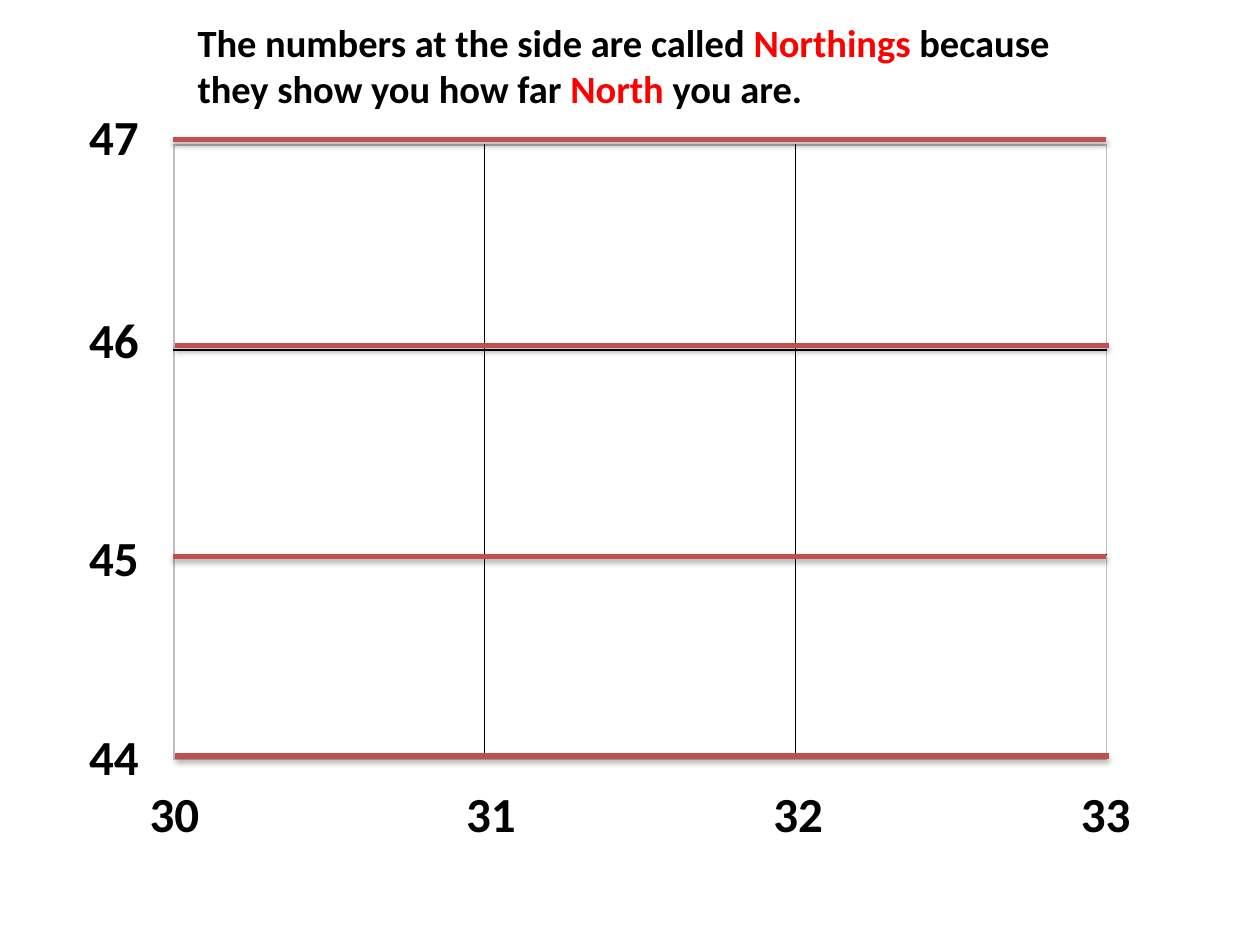
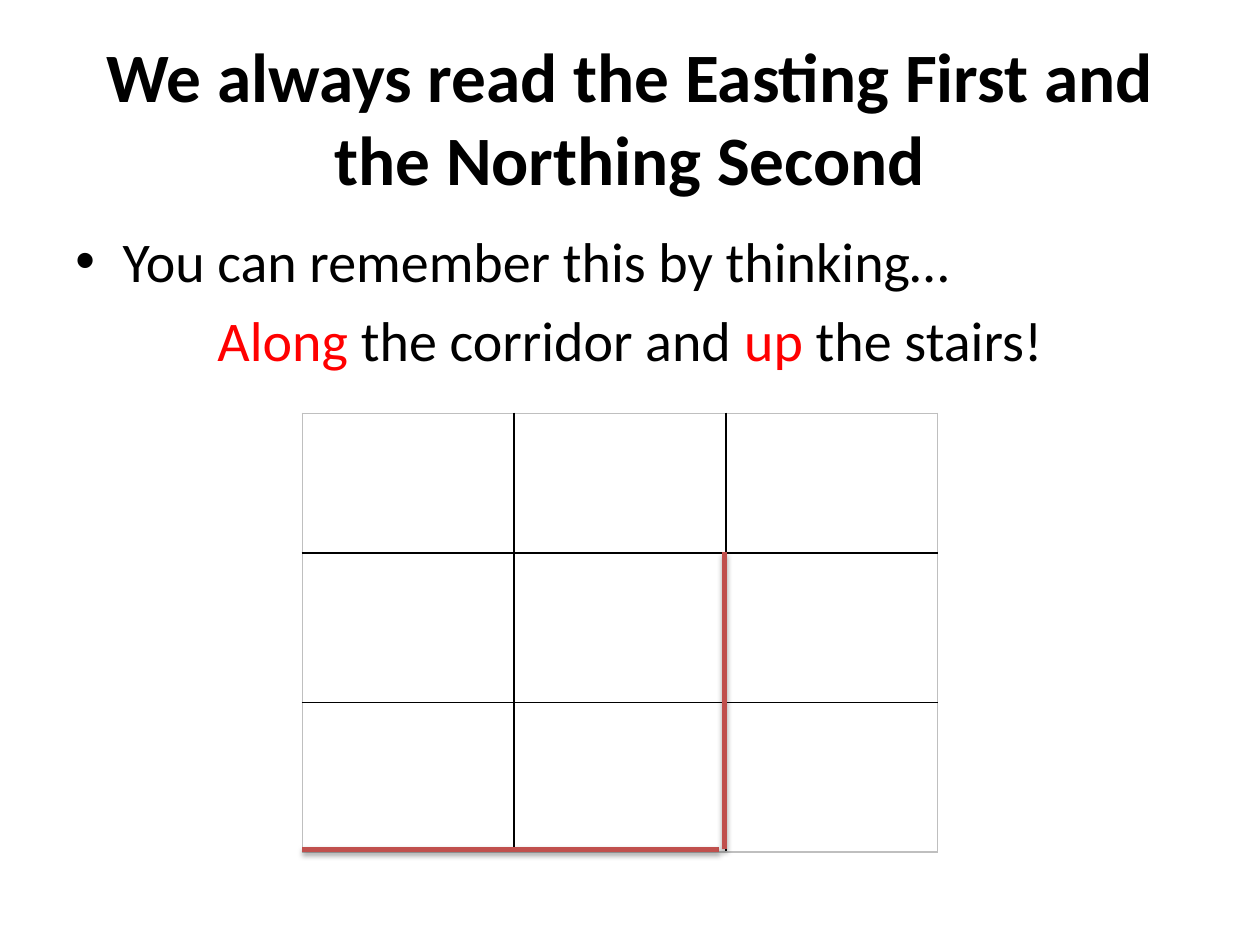
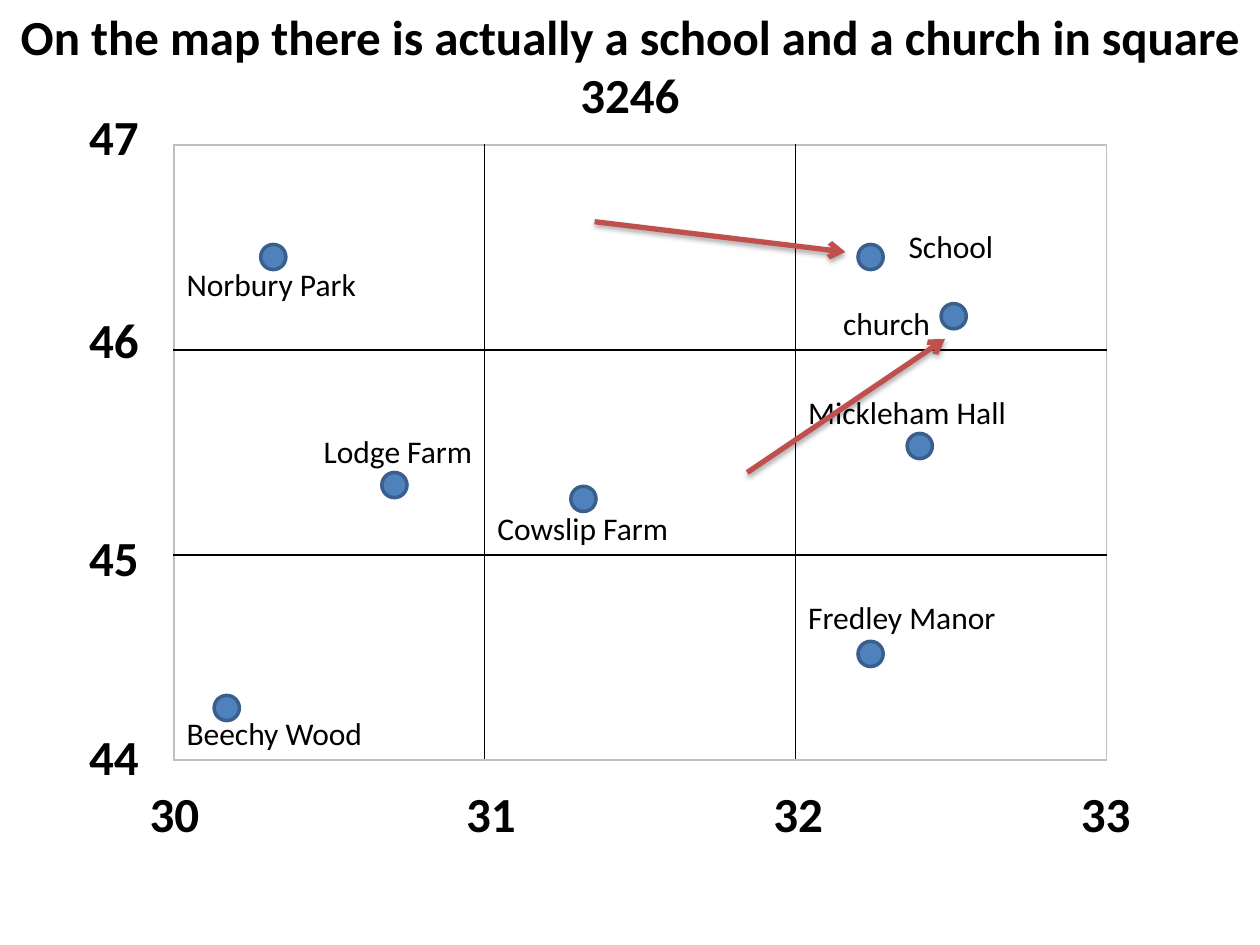
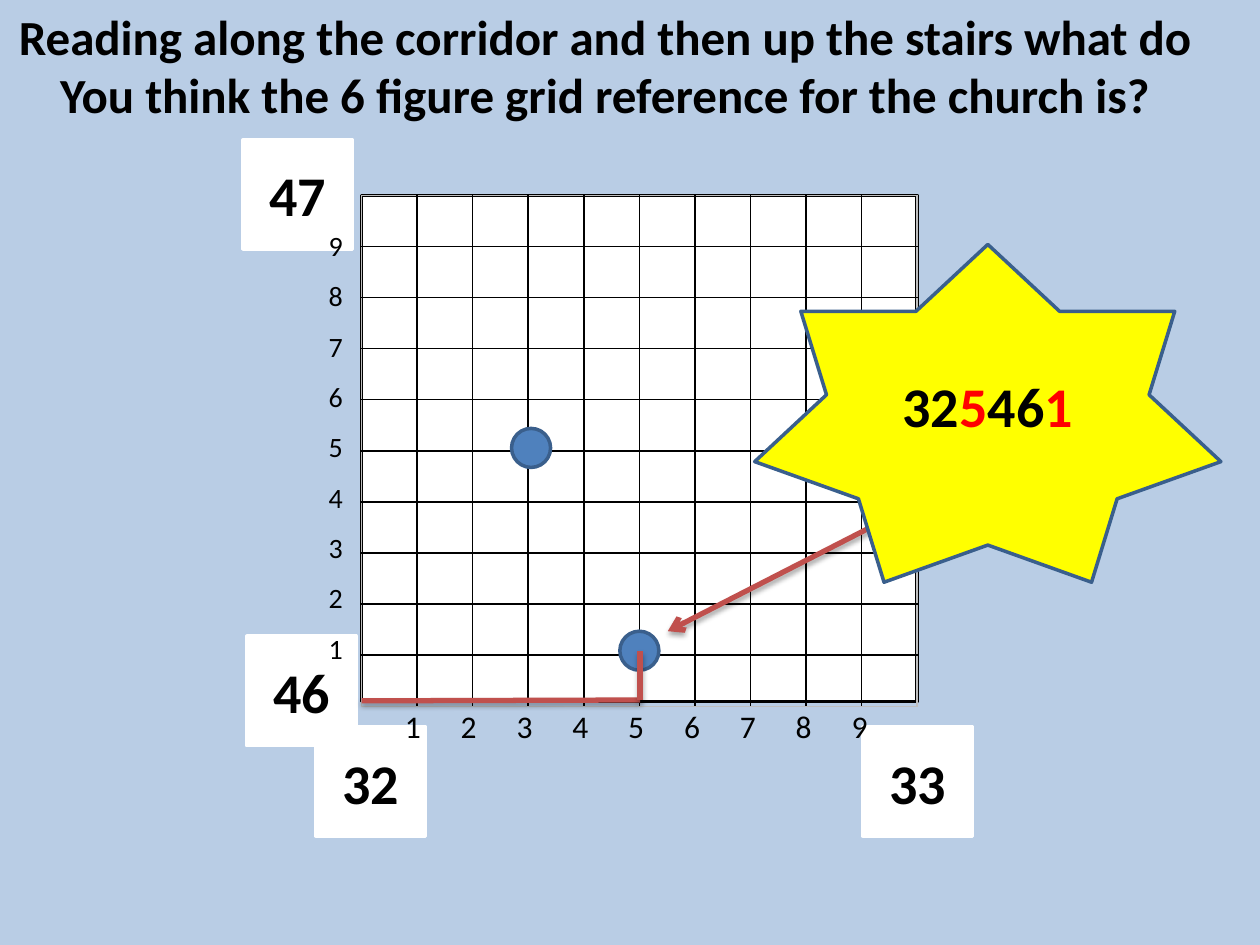
from pptx import Presentation
from pptx import util as u
from pptx.dml import color
from pptx.enum import shapes, text
from pptx.oxml import ns
from lxml import etree

Pt = u.Pt
FONT = "Calibri"
BLACK, WHITE, RED, GREY = "000000", "FFFFFF", "FF0000", "BFBFBF"
BRICK, BLUE, NAVY = "C0504D", "4F81BD", "3A5F8C"
SKY, YELLOW = "B9CDE5", "FFFF00"
LEFT, CENTER, RIGHT = (text.PP_ALIGN.LEFT, text.PP_ALIGN.CENTER,
                       text.PP_ALIGN.RIGHT)
LINE = 22  # height of one line of 18 pt text
MAP_BOX = (99.4, 82.8, 532.8, 351.36)
HEADING = dict(size=28, bold=True, align=CENTER)


def rgb(value):
    return color.RGBColor.from_string(value)


def xml_child(parent, tag, **attributes):
    child = etree.SubElement(parent, ns.qn(tag))
    for key, value in attributes.items():
        child.set(key, str(value))
    return child


def apply(target, **values):
    for key, value in values.items():
        setattr(target, key, value)


def write(paragraph, runs, size=18, bold=False, align=LEFT, **spacing):
    """Fill a paragraph; runs is a string or a list of (wording, colour)."""
    apply(paragraph, alignment=align, **spacing)
    for wording, tint in [(runs, BLACK)] if isinstance(runs, str) else runs:
        run = paragraph.add_run()
        run.text = wording
        apply(run.font, name=FONT, size=Pt(size), bold=bold)
        run.font.color.rgb = rgb(tint)


def next_paragraph(frame, index):
    return frame.paragraphs[0] if index == 0 else frame.add_paragraph()


def add_text(slide, box, lines, wrap=True, anchor=text.MSO_ANCHOR.TOP,
             **style):
    frame = slide.shapes.add_textbox(*map(Pt, box)).text_frame
    apply(frame, word_wrap=wrap, vertical_anchor=anchor)
    for index, runs in enumerate(lines):
        write(next_paragraph(frame, index), runs, **style)
    return frame


def add_figure(slide, preset, box, fill, outline, runs=None):
    figure = slide.shapes.add_shape(preset, *map(Pt, box))
    figure.shadow.inherit = False
    figure.fill.solid()
    figure.fill.fore_color.rgb = rgb(fill)
    figure.line.color.rgb = rgb(outline)
    figure.line.width = Pt(2)
    if runs:
        figure.text_frame.vertical_anchor = text.MSO_ANCHOR.MIDDLE
        write(figure.text_frame.paragraphs[0], runs, 32, True, CENTER)


def add_dots(slide, corners, diameter):
    for left, top in corners:
        add_figure(slide, shapes.MSO_SHAPE.OVAL,
                   (left, top, diameter, diameter), BLUE, NAVY)


def add_route(slide, start, end, arrow=False):
    """Thick red line with a soft shadow below it."""
    route = slide.shapes.add_connector(shapes.MSO_CONNECTOR.STRAIGHT,
                                       *map(Pt, (*start, *end)))
    route.line.color.rgb = rgb(BRICK)
    route.line.width = Pt(3)
    properties = route._element.spPr
    if arrow:
        xml_child(properties.find(ns.qn("a:ln")), "a:tailEnd", type="arrow")
    effects = xml_child(properties, "a:effectLst")
    shadow = xml_child(effects, "a:outerShdw", blurRad=Pt(3.1), dist=Pt(1.8),
                       dir=5400000, rotWithShape=0)
    xml_child(xml_child(shadow, "a:srgbClr", val=BLACK), "a:alpha", val=35000)


def draw_borders(cell, outer_sides):
    properties = cell._tc.get_or_add_tcPr()
    for side in "LRTB":
        border = xml_child(properties, f"a:ln{side}", w=Pt(1))
        tint = GREY if side in outer_sides else BLACK
        xml_child(xml_child(border, "a:solidFill"), "a:srgbClr", val=tint)


def add_grid(slide, box, count, heights=None):
    """Square table of count by count cells, grey outside, black inside."""
    left, top, width, height = box
    heights = heights or [height / count] * count
    grid = slide.shapes.add_table(count, count, *map(Pt, box)).table
    apply(grid, first_row=False, horz_banding=False)
    for column in grid.columns:
        column.width = Pt(width / count)
    for row, row_height in zip(grid.rows, heights):
        row.height = Pt(row_height)
    last = count - 1
    for r in range(count):
        for c in range(count):
            edges = {"L": c == 0, "R": c == last, "T": r == 0, "B": r == last}
            cell = grid.cell(r, c)
            draw_borders(cell, [side for side, is_outer in edges.items()
                                if is_outer])
            cell.fill.background()
    return grid


def add_map(slide, box):
    """Three by three map grid with its northings and eastings."""
    left, top, width, height = box
    grid = add_grid(slide, box, 3)
    northings = zip((47, 46, 45, 44), (-25.2, 90.7, 215.3, 329))
    eastings = zip((30, 31, 32, 33), (-22.4, 158.4, 334, 509.7))
    places = [(n, left - 57, top + dy) for n, dy in northings]
    places += [(n, left + dx, top + height + 10) for n, dx in eastings]
    for number, x, y in places:
        add_text(slide, (x, y, 45.4, 41), [str(number)], **HEADING)
    return grid


def place_names(grid):
    """Each place: row, column, lines above it, name, alignment."""
    places = [(0, 0, 3, "Norbury Park", LEFT), (0, 2, 2, "School", CENTER),
              (1, 0, 2, "Lodge Farm", RIGHT), (1, 1, 4, "Cowslip Farm", LEFT),
              (1, 2, 1, "Mickleham Hall", LEFT),
              (2, 0, 4, "Beechy Wood", LEFT), (2, 2, 1, "Fredley Manor", LEFT)]
    for row, column, lines_above, name, align in places:
        cell = grid.cell(row, column)
        cell.margin_top = Pt(3.6 + lines_above * LINE)
        write(cell.text_frame.paragraphs[0], name, align=align)
    answer = grid.cell(0, 2)
    answer.fill.solid()
    answer.fill.fore_color.rgb = rgb(WHITE)
    church = answer.text_frame.add_paragraph()
    write(church, "church", space_before=Pt(LINE))
    church._p.get_or_add_pPr().set("marL", str(Pt(20)))


def northings_slide(slide):
    add_map(slide, MAP_BOX)
    add_text(slide, (105.8, 7.2, 527, 60.5), [[
        ("The numbers at the side are called ", BLACK), ("Northings ", RED),
        ("because they show you how far ", BLACK), ("North ", RED),
        ("you are.", BLACK)]], size=22, bold=True)
    left, top, width, _ = MAP_BOX
    for dx, dy in ((0.7, 349.2), (-0.8, 235.4), (0.7, 114.5), (-0.8, -2.9)):
        add_route(slide, (left + dx, top + dy), (left + dx + 533.5, top + dy))


def reading_order_slide(slide):
    add_text(slide, (36, 21.6, 648, 90),
             ["We always read the Easting First and the Northing Second"],
             size=39.6, bold=True, align=CENTER,
             anchor=text.MSO_ANCHOR.MIDDLE)
    body = add_text(slide, (36, 126, 648, 356.4), [
        "You can remember this by thinking…",
        [("Along", RED), (" the corridor and ", BLACK), ("up", RED),
         (" the stairs!", BLACK)]], size=32, space_before=Pt(6.4))
    reminder, rhyme = body.paragraphs
    rhyme.alignment = CENTER
    bullet = reminder._p.get_or_add_pPr()
    bullet.set("marL", str(Pt(27)))
    bullet.set("indent", str(Pt(-27)))
    xml_child(bullet, "a:buFont", typeface="Arial")
    xml_child(bullet, "a:buChar", char="•")

    left, top, width, height = box = (172.8, 236.2, 363, 250.6)
    add_grid(slide, box, 3, (79.8, 85.4, 85.4))
    floor, stairs = top + height - 1.5, left + 241.2
    add_route(slide, (left, floor), (stairs - 2.9, floor))
    add_route(slide, (stairs, floor), (stairs, top + 79.2))


def places_slide(slide):
    place_names(add_map(slide, MAP_BOX))
    add_text(slide, (0, 0, 720, 75), [
        "On the map there is actually a school and a church in square 3246"],
        **HEADING)
    left, top, *_ = MAP_BOX
    spots = ((49.6, 56.9), (118.8, 187.2), (226.8, 195.1), (23, 314.6),
             (390.9, 283.7), (419, 164.9), (390.9, 56.9), (438.4, 90.7))
    add_dots(slide, [(left + dx, top + dy) for dx, dy in spots], 14.4)
    add_route(slide, (339.8, 126.7), (483.1, 144), arrow=True)
    add_route(slide, (427, 270), (540, 193.7), arrow=True)


def add_tenths(slide, box):
    """One map square split into tenths, with its corner numbers."""
    left, top, width, height = box
    rectangle = shapes.MSO_SHAPE.RECTANGLE
    add_figure(slide, rectangle, (left, top, width, height + 1.4),
               WHITE, BLACK)
    for number, dx, dy in ((46, -65.5, 252), (33, 286.6, 303.8),
                           (47, -67.7, -31.7), (32, -25.9, 303.8)):
        add_figure(slide, rectangle, (left + dx, top + dy, 62.6, 62.6),
                   WHITE, WHITE, str(number))
    add_grid(slide, box, 10)
    across = add_text(slide, (left - 10.8, top + height + 0.7, 348.5, 29),
                      ["".join(f"\t{n}" for n in range(1, 10))])
    stops = xml_child(across.paragraphs[0]._p.get_or_add_pPr(), "a:tabLst")
    for step in range(9):
        xml_child(stops, "a:tab", pos=Pt(33.1 + 31.9 * step), algn="ctr")
    add_text(slide, (left - 25.9, top + 5.8, 23, 265.7),
             [str(n) for n in range(9, 0, -1)], size=16, line_spacing=1.5)


def six_figure_slide(slide):
    slide.background.fill.solid()
    slide.background.fill.fore_color.rgb = rgb(SKY)
    left, top, width, height = box = (206.6, 111.6, 317.5, 288)
    add_tenths(slide, box)
    add_text(slide, (-0.7, 0, 699, 75), [
        "Reading along the corridor and then up the stairs what do ",
        "You think the 6 figure grid reference for the church is? "],
        wrap=False, **HEADING)
    add_dots(slide, ((292.3, 244.8), (354.2, 360.7)), 22.3)
    add_route(slide, (610.6, 243.4), (381.6, 360.7), arrow=True)
    corner = (left + 159.2, top + height + 0.4)
    add_route(slide, (left, top + height + 0.9), corner)
    add_route(slide, corner, (corner[0], 372.2))
    add_figure(slide, shapes.MSO_SHAPE.STAR_7_POINT,
               (431.3, 139.7, 266.4, 193), YELLOW, NAVY,
               [("32", BLACK), ("5", RED), ("46", BLACK), ("1", RED)])


def main():
    deck = Presentation()
    apply(deck, slide_width=Pt(720), slide_height=Pt(540))
    blank = deck.slide_layouts[6]
    for build in (northings_slide, reading_order_slide, places_slide,
                  six_figure_slide):
        build(deck.slides.add_slide(blank))
    deck.save("out.pptx")


if __name__ == "__main__":
    main()
